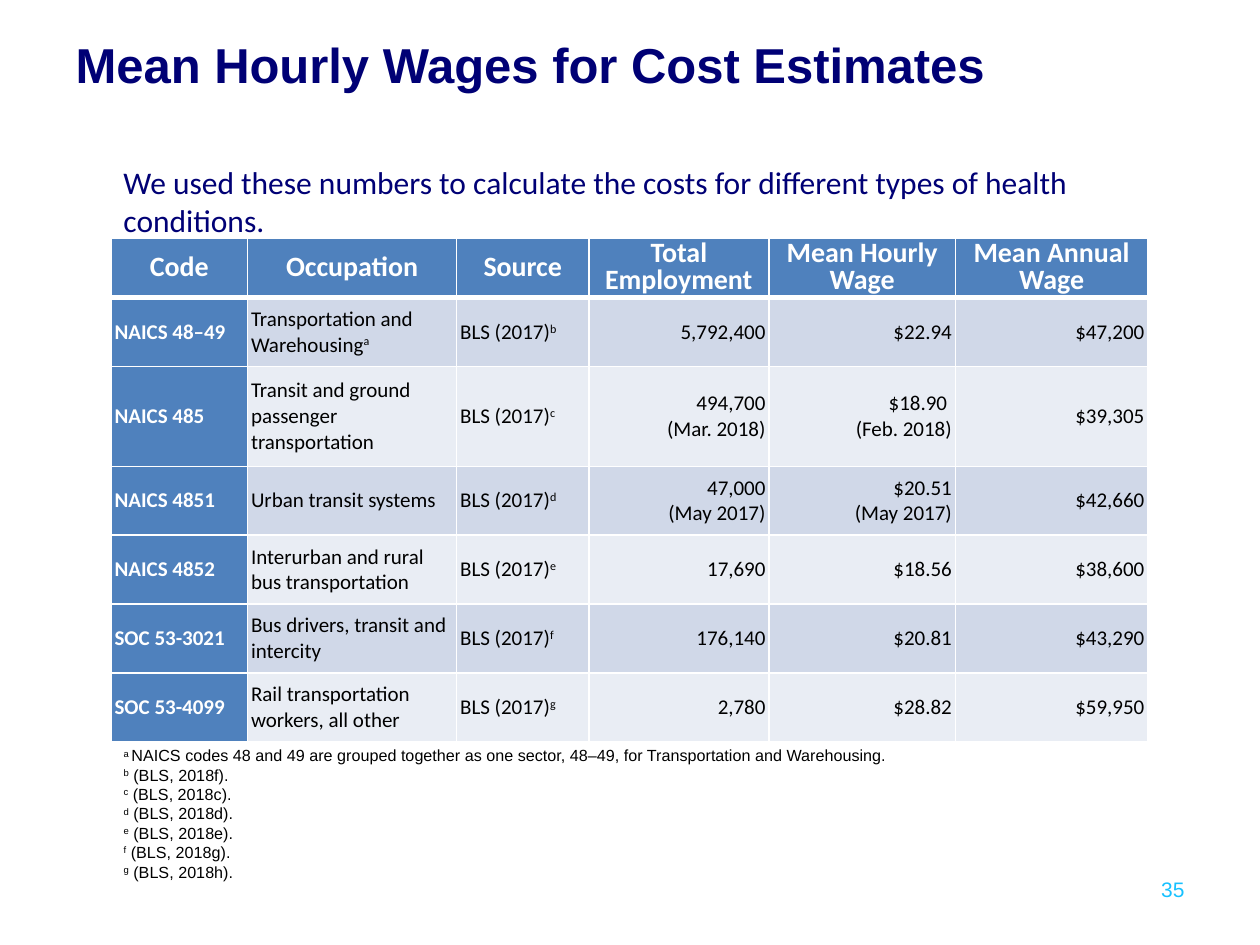
from lxml import etree
from pptx import Presentation
from pptx.dml.color import RGBColor
from pptx.enum.text import MSO_ANCHOR, MSO_AUTO_SIZE, PP_ALIGN
from pptx.oxml.ns import qn
from pptx.util import Pt

LEFT, CENTER, RIGHT = PP_ALIGN.LEFT, PP_ALIGN.CENTER, PP_ALIGN.RIGHT
TOP, MIDDLE = MSO_ANCHOR.TOP, MSO_ANCHOR.MIDDLE
NO_AUTOFIT = MSO_AUTO_SIZE.NONE

NAVY = RGBColor(0x00, 0x00, 0x75)
BLUE = RGBColor(0x4F, 0x81, 0xBD)
BANDS = (RGBColor(0xD0, 0xD8, 0xE8), RGBColor(0xE9, 0xED, 0xF4))
CYAN = RGBColor(0x17, 0xC1, 0xFF)
WHITE = RGBColor(0xFF, 0xFF, 0xFF)
BLACK = RGBColor(0x00, 0x00, 0x00)

# Content: text between carets is superscript, a newline starts a paragraph
TITLE = "Mean Hourly Wages for Cost Estimates"
INTRO = ("We used these numbers to calculate the costs for different types "
         "of health conditions.")
PAGE_NUMBER = "35"
HEADER = ("Code", "Occupation", "Source", "Total Employment",
          "Mean Hourly Wage", "Mean Annual Wage")
WAGES = [
    ("NAICS 48–49", "Transportation and Warehousing^a^", "BLS (2017)^b^",
     "5,792,400", "$22.94", "$47,200"),
    ("NAICS 485", "Transit and ground passenger transportation", "BLS (2017)^c^",
     "494,700\n(Mar. 2018)", "$18.90 \n(Feb. 2018)", "$39,305"),
    ("NAICS 4851", "Urban transit systems", "BLS (2017)^d^",
     "47,000\n(May 2017)", "$20.51\n(May 2017)", "$42,660"),
    ("NAICS 4852", "Interurban and rural bus transportation", "BLS (2017)^e^",
     "17,690", "$18.56", "$38,600"),
    ("SOC 53-3021", "Bus drivers, transit and intercity", "BLS (2017)^f^",
     "176,140", "$20.81", "$43,290"),
    ("SOC 53-4099", "Rail transportation workers, all other", "BLS (2017)^g^",
     "2,780", "$28.82", "$59,950"),
]
FOOTNOTES = "\n".join([
    "^a ^NAICS codes 48 and 49 are grouped together as one sector, 48–49, "
    "for Transportation and Warehousing.",
    "^b^ (BLS, 2018f).",
    "^c^ (BLS, 2018c).",
    "^d^ (BLS, 2018d).",
    "^e^ (BLS, 2018e).",
    "^f^ (BLS, 2018g).",
    "^g^ (BLS, 2018h).",
])

# Layout in points
TABLE_LEFT, TABLE_TOP = 63.5, 136
COLUMN_WIDTHS = (78, 119.5, 75.5, 103, 106.5, 110)
ROW_HEIGHTS = (24, 39.4, 57, 39.4, 39.4, 39.4, 39.4)
CELL_MARGINS = {"margin_left": Pt(2), "margin_right": Pt(2),
                "margin_top": Pt(1.4), "margin_bottom": Pt(1.4)}

# Font formats
TITLE_FONT = {"name": "Arial", "size": Pt(28), "bold": True}
INTRO_FONT = {"name": "Calibri", "size": Pt(18), "bold": False}
NOTE_FONT = {"name": "Arial", "size": Pt(9.2), "bold": False}
NUMBER_FONT = {"name": "Arial", "size": Pt(12), "bold": False}
HEADER_FONT = {"name": "Calibri", "size": Pt(16), "bold": True}
CODE_FONT = {"name": "Calibri", "size": Pt(12), "bold": True}
CELL_FONT = {"name": "Calibri", "size": Pt(12), "bold": False}


def set_attributes(target, values):
    for name, value in values.items():
        setattr(target, name, value)


def write_text(text_frame, text, font, color, alignment=LEFT, line_spacing=1.0):
    for index, line in enumerate(text.split("\n")):
        paragraph = text_frame.paragraphs[0] if index == 0 else text_frame.add_paragraph()
        properties = paragraph._p.get_or_add_pPr()
        properties.set("marL", "0")
        properties.set("indent", "0")
        etree.SubElement(properties, qn("a:buNone"))
        set_attributes(paragraph, {"alignment": alignment, "line_spacing": line_spacing,
                                   "space_before": Pt(0), "space_after": Pt(0)})
        for part, piece in enumerate(line.split("^")):
            if not piece:
                continue
            run = paragraph.add_run()
            run.text = piece
            set_attributes(run.font, font)
            run.font.color.rgb = color
            if part % 2:
                run._r.get_or_add_rPr().set("baseline", "30000")


def place_text(shape, box, text, font, color, anchor=TOP, alignment=LEFT):
    shape.left, shape.top, shape.width, shape.height = map(Pt, box)
    set_attributes(shape.text_frame, {"word_wrap": True, "auto_size": NO_AUTOFIT,
                                      "vertical_anchor": anchor})
    write_text(shape.text_frame, text, font, color, alignment)


def set_borders(cell, widths):
    properties = cell._tc.get_or_add_tcPr()
    for index, (side, width) in enumerate(widths.items()):
        line = etree.Element(qn(f"a:ln{side}"), w=str(Pt(width)))
        fill = etree.SubElement(line, qn("a:solidFill"))
        etree.SubElement(fill, qn("a:srgbClr"), val=str(WHITE))
        properties.insert(index, line)


def cell_style(row, column):
    """Return fill, font, text colour, alignment and line spacing."""
    if row == 0:
        return BLUE, HEADER_FONT, WHITE, CENTER, 0.8
    if column == 0:
        return BLUE, CODE_FONT, WHITE, LEFT, 1.0
    return BANDS[(row - 1) % 2], CELL_FONT, BLACK, LEFT if column < 3 else RIGHT, 1.0


def add_wage_table(slide):
    rows = [HEADER, *WAGES]
    table = slide.shapes.add_table(
        len(rows), len(HEADER), Pt(TABLE_LEFT), Pt(TABLE_TOP),
        Pt(sum(COLUMN_WIDTHS)), Pt(sum(ROW_HEIGHTS))).table
    for column, width in zip(table.columns, COLUMN_WIDTHS):
        column.width = Pt(width)
    for row, height in zip(table.rows, ROW_HEIGHTS):
        row.height = Pt(height)
    for row, texts in enumerate(rows):
        for column, text in enumerate(texts):
            cell = table.cell(row, column)
            fill, font, color, alignment, spacing = cell_style(row, column)
            set_attributes(cell, {"vertical_anchor": MIDDLE, **CELL_MARGINS})
            cell.fill.solid()
            cell.fill.fore_color.rgb = fill
            set_borders(cell, {"L": 1, "R": 1, "T": 3 if row == 1 else 1,
                               "B": 3 if row == 0 else 1})
            write_text(cell.text_frame, text, font, color, alignment, spacing)


def main():
    presentation = Presentation()
    presentation.slide_width, presentation.slide_height = Pt(720), Pt(540)
    slide = presentation.slides.add_slide(presentation.slide_layouts[1])

    # Title
    place_text(slide.shapes.title, (36, 0, 616, 73), TITLE, TITLE_FONT, NAVY, MIDDLE)

    # Wage table
    add_wage_table(slide)

    # Page number
    number = slide.shapes.add_textbox(0, 0, 0, 0)
    place_text(number, (632, 498.5, 52, 19.5), PAGE_NUMBER, NUMBER_FONT, CYAN,
               MIDDLE, RIGHT)

    # Footnotes
    place_text(slide.placeholders[1], (TABLE_LEFT, 422.6, 648, 78), FOOTNOTES,
               NOTE_FONT, BLACK)

    # Introduction
    intro = slide.shapes.add_textbox(0, 0, 0, 0)
    place_text(intro, (TABLE_LEFT, 89.5, sum(COLUMN_WIDTHS), 51), INTRO,
               INTRO_FONT, NAVY)

    presentation.save("out.pptx")


if __name__ == "__main__":
    main()
